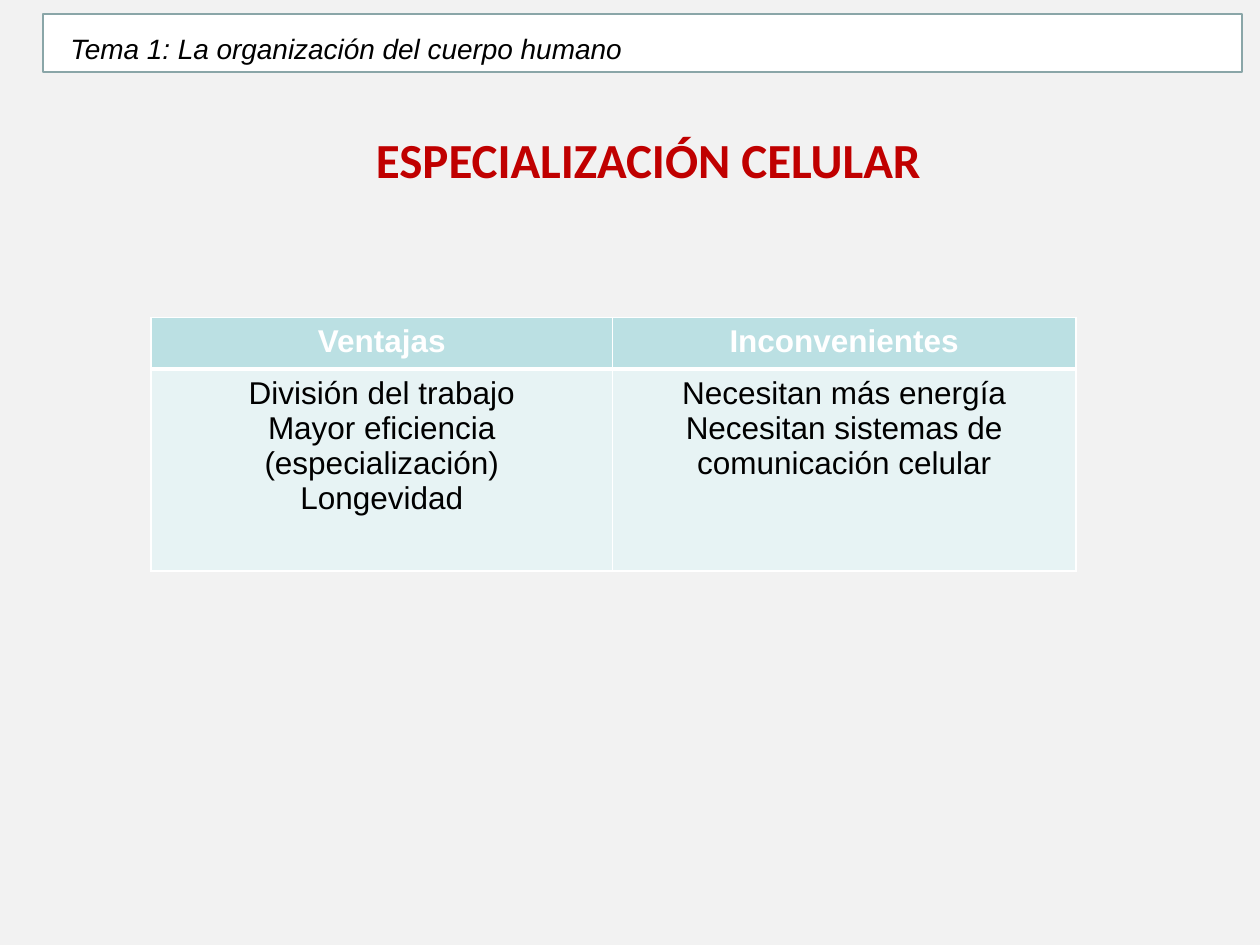
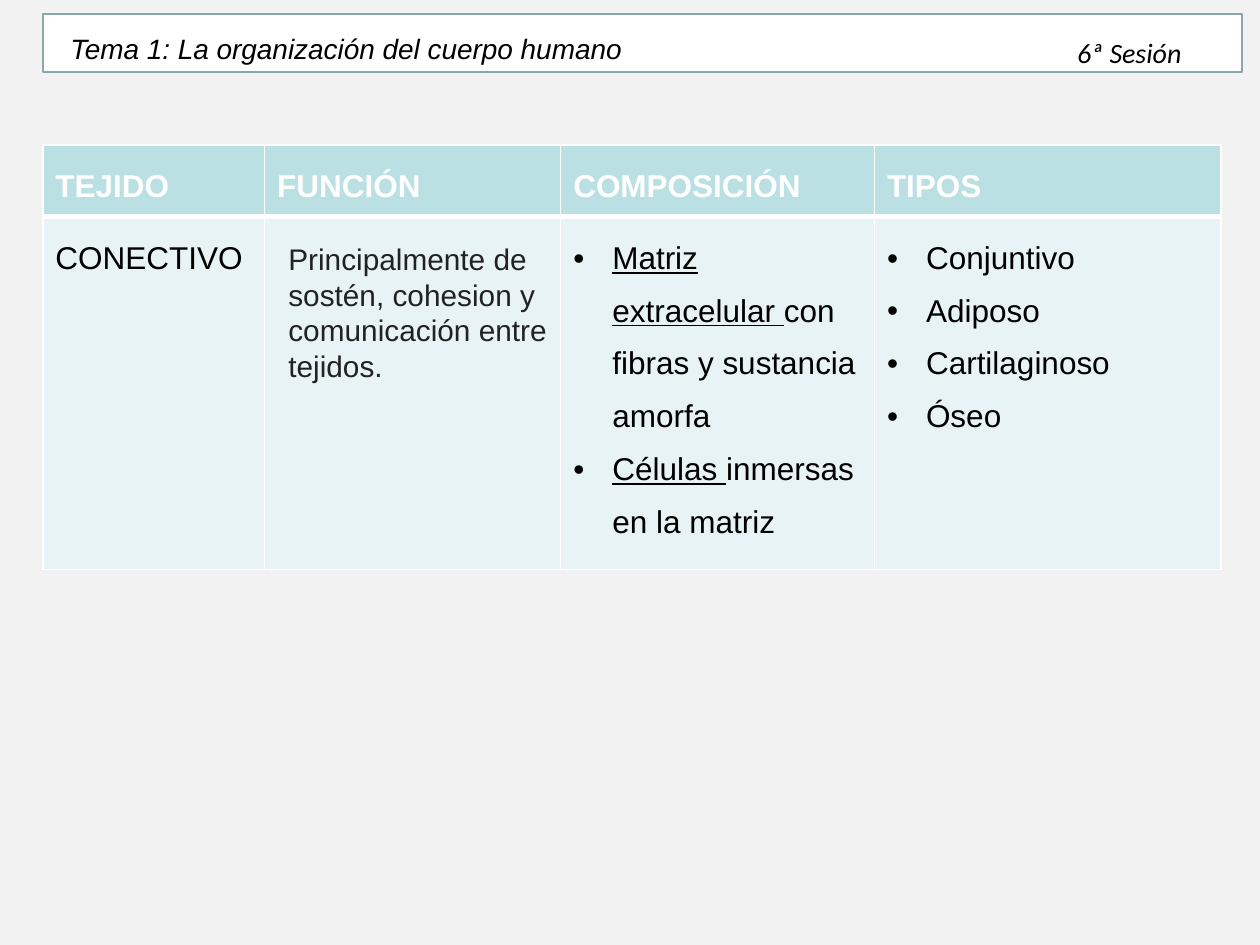
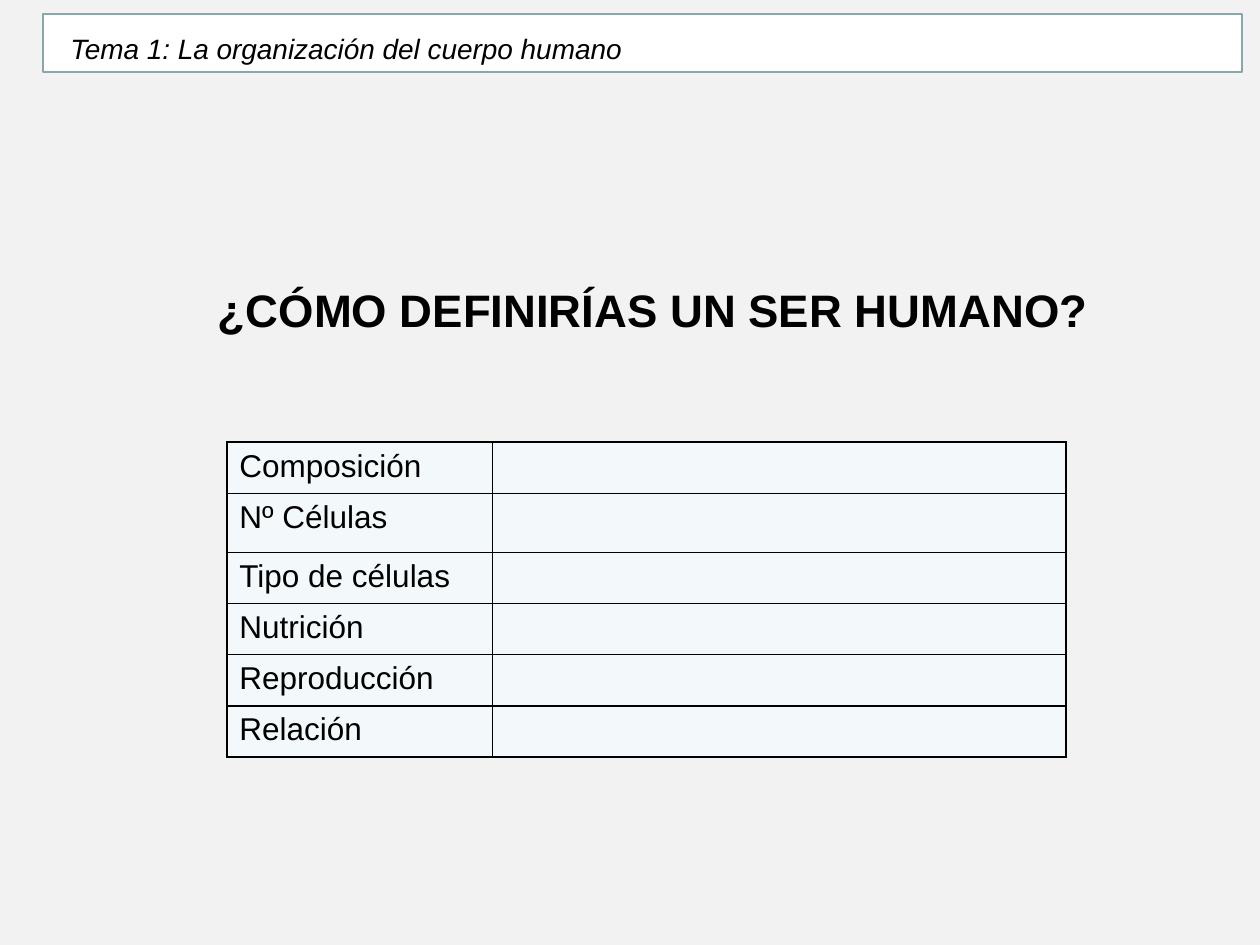
from lxml.etree import SubElement
from pptx import Presentation
from pptx.dml.color import RGBColor
from pptx.enum.shapes import MSO_SHAPE
from pptx.enum.text import MSO_ANCHOR, MSO_AUTO_SIZE, PP_ALIGN
from pptx.oxml.ns import qn
from pptx.util import Inches, Pt

BACKGROUND = RGBColor(0xF2, 0xF2, 0xF2)
WHITE = RGBColor(0xFF, 0xFF, 0xFF)
BLACK = RGBColor(0x00, 0x00, 0x00)
RED = RGBColor(0xC0, 0x00, 0x00)
DARK_GRAY = RGBColor(0x22, 0x22, 0x22)
BAND_LINE = RGBColor(0x8A, 0xA6, 0xA8)
HEADER_FILL = RGBColor(0xBB, 0xE0, 0xE3)
BODY_FILL = RGBColor(0xE7, 0xF3, 0xF4)
FORM_FILL = RGBColor(0xF3, 0xF9, 0xFA)

TITLE_ONLY, BLANK = 5, 6


def write_text(frame, paragraphs, size=18, font="Arial", color=BLACK, bold=False,
               italic=False, align=PP_ALIGN.LEFT, spacing=1.0, bullet=False):
    """Each paragraph is a string or a list of (text, underlined) runs."""
    for index, content in enumerate(paragraphs):
        paragraph = frame.paragraphs[0] if index == 0 else frame.add_paragraph()
        paragraph.alignment = align
        paragraph.line_spacing = spacing
        if bullet:
            add_bullet(paragraph)
        runs = [(content, False)] if isinstance(content, str) else content
        for text, underlined in runs:
            run = paragraph.add_run()
            run.text = text
            run.font.size = Pt(size)
            run.font.name = font
            run.font.color.rgb = color
            run.font.bold = bold
            run.font.italic = italic
            run.font.underline = underlined


def add_bullet(paragraph, indent=Inches(0.31)):
    properties = paragraph._p.get_or_add_pPr()
    properties.set("marL", str(indent))
    properties.set("indent", str(-indent))
    SubElement(properties, qn("a:buFont"), typeface="Arial")
    SubElement(properties, qn("a:buChar"), char="•")


def set_borders(cell, color, left=1, right=1, top=1, bottom=1):
    properties = cell._tc.get_or_add_tcPr()
    widths = {"a:lnL": left, "a:lnR": right, "a:lnT": top, "a:lnB": bottom}
    for tag, width in widths.items():
        line = SubElement(properties, qn(tag), w=str(Pt(width)))
        fill = SubElement(line, qn("a:solidFill"))
        SubElement(fill, qn("a:srgbClr"), val=str(color))


class Deck:
    def __init__(self):
        self.presentation = Presentation()
        self.presentation.slide_width = Inches(10)
        self.presentation.slide_height = Inches(7.5)
        fill = self.presentation.slide_master.background.fill
        fill.solid()
        fill.fore_color.rgb = BACKGROUND
        self.slide = None

    def new_slide(self, layout):
        layouts = self.presentation.slide_layouts
        self.slide = self.presentation.slides.add_slide(layouts[layout])

    def title(self, text, left, top, width, height, **style):
        title = self.slide.shapes.title
        title.left, title.top = Inches(left), Inches(top)
        title.width, title.height = Inches(width), Inches(height)
        frame = title.text_frame
        frame.auto_size = MSO_AUTO_SIZE.NONE
        frame.vertical_anchor = MSO_ANCHOR.TOP
        write_text(frame, [text], bold=True, **style)

    def text(self, text, left, top, width, height, **style):
        box = self.slide.shapes.add_textbox(
            Inches(left), Inches(top), Inches(width), Inches(height))
        box.text_frame.word_wrap = True
        box.text_frame.auto_size = MSO_AUTO_SIZE.SHAPE_TO_FIT_TEXT
        write_text(box.text_frame, [text], **style)

    def band(self, session=None):
        band = self.slide.shapes.add_shape(
            MSO_SHAPE.RECTANGLE, Inches(0.34), Inches(0.11), Inches(9.52), Inches(0.46))
        band.shadow.inherit = False
        band.fill.solid()
        band.fill.fore_color.rgb = WHITE
        band.line.color.rgb = BAND_LINE
        band.line.width = Pt(1)
        if session:
            self.text(session, 8.45, 0.23, 1.4, 0.37, size=16, font="Calibri", italic=True)
        self.text("Tema 1: La organización del cuerpo humano",
                  0.46, 0.2, 5.26, 0.37, size=16, italic=True)

    def table(self, left, top, columns, rows, has_header):
        table = self.slide.shapes.add_table(
            len(rows), len(columns), Inches(left), Inches(top),
            Inches(sum(columns)), Inches(sum(rows))).table
        table.first_row = has_header
        table.horz_banding = False
        for column, width in zip(table.columns, columns):
            column.width = Inches(width)
        for row, height in zip(table.rows, rows):
            row.height = Inches(height)
        return table

    def cell(self, cell, paragraphs, fill, **style):
        cell.fill.solid()
        cell.fill.fore_color.rgb = fill
        write_text(cell.text_frame, paragraphs, **style)

    def header_table(self, left, top, columns, rows, headers, bodies, bulleted=(), **style):
        table = self.table(left, top, columns, rows, has_header=True)
        for index, (header, body) in enumerate(zip(headers, bodies)):
            head_cell, body_cell = table.cell(0, index), table.cell(1, index)
            set_borders(head_cell, WHITE, bottom=3)
            set_borders(body_cell, WHITE, top=3)
            self.cell(head_cell, [header], HEADER_FILL, color=WHITE, bold=True, **style)
            self.cell(body_cell, body, BODY_FILL, bullet=index in bulleted, **style)

    def form_table(self, left, top, columns, rows, labels):
        table = self.table(left, top, columns, rows, has_header=False)
        for index, label in enumerate(labels):
            for column, paragraphs in enumerate(([label], [])):
                cell = table.cell(index, column)
                set_borders(cell, BLACK)
                self.cell(cell, paragraphs, FORM_FILL)


def main():
    deck = Deck()

    # Cell specialisation: advantages and drawbacks
    deck.new_slide(TITLE_ONLY)
    deck.title("ESPECIALIZACIÓN CELULAR", 2.72, 0.98, 4.85, 0.57, size=28,
               font="Calibri", color=RED, align=PP_ALIGN.CENTER)
    deck.header_table(
        1.2, 2.52, [3.66, 3.68], [0.41, 1.6],
        ["Ventajas", "Inconvenientes"],
        [["División del trabajo", "Mayor eficiencia (especialización)", "Longevidad"],
         ["Necesitan más energía", "Necesitan sistemas de comunicación celular"]],
        align=PP_ALIGN.CENTER)
    deck.band()

    # Connective tissue
    deck.new_slide(BLANK)
    deck.header_table(
        0.34, 1.15, [1.76, 2.35, 2.49, 2.75], [0.57, 2.8],
        ["TEJIDO", "FUNCIÓN", "COMPOSICIÓN", "TIPOS"],
        [["CONECTIVO"],
         [],
         [[("Matriz extracelular ", True), ("con fibras y sustancia amorfa", False)],
          [("Células ", True), ("inmersas en la matriz", False)]],
         ["Conjuntivo", "Adiposo", "Cartilaginoso", "Óseo"]],
        bulleted=(2, 3), spacing=1.5)
    deck.text("Principalmente de sostén, cohesion y comunicación entre tejidos.",
              2.19, 1.86, 2.51, 1.25, size=17, color=DARK_GRAY)
    deck.band(session="6ª Sesión")

    # Defining a human being: form to fill in
    deck.new_slide(TITLE_ONLY)
    deck.title("¿CÓMO DEFINIRÍAS UN SER HUMANO?", 1.63, 2.19, 7.73, 0.54, size=26)
    labels = ["Composición", "Nº Células", "Tipo de células",
              "Nutrición", "Reproducción", "Relación"]
    tall_row = 0.47
    row = (2.49 - tall_row) / (len(labels) - 1)
    deck.form_table(1.8, 3.51, [2.11, 4.55], [row, tall_row] + [row] * 4, labels)
    deck.band()

    deck.presentation.save("out.pptx")


if __name__ == "__main__":
    main()
